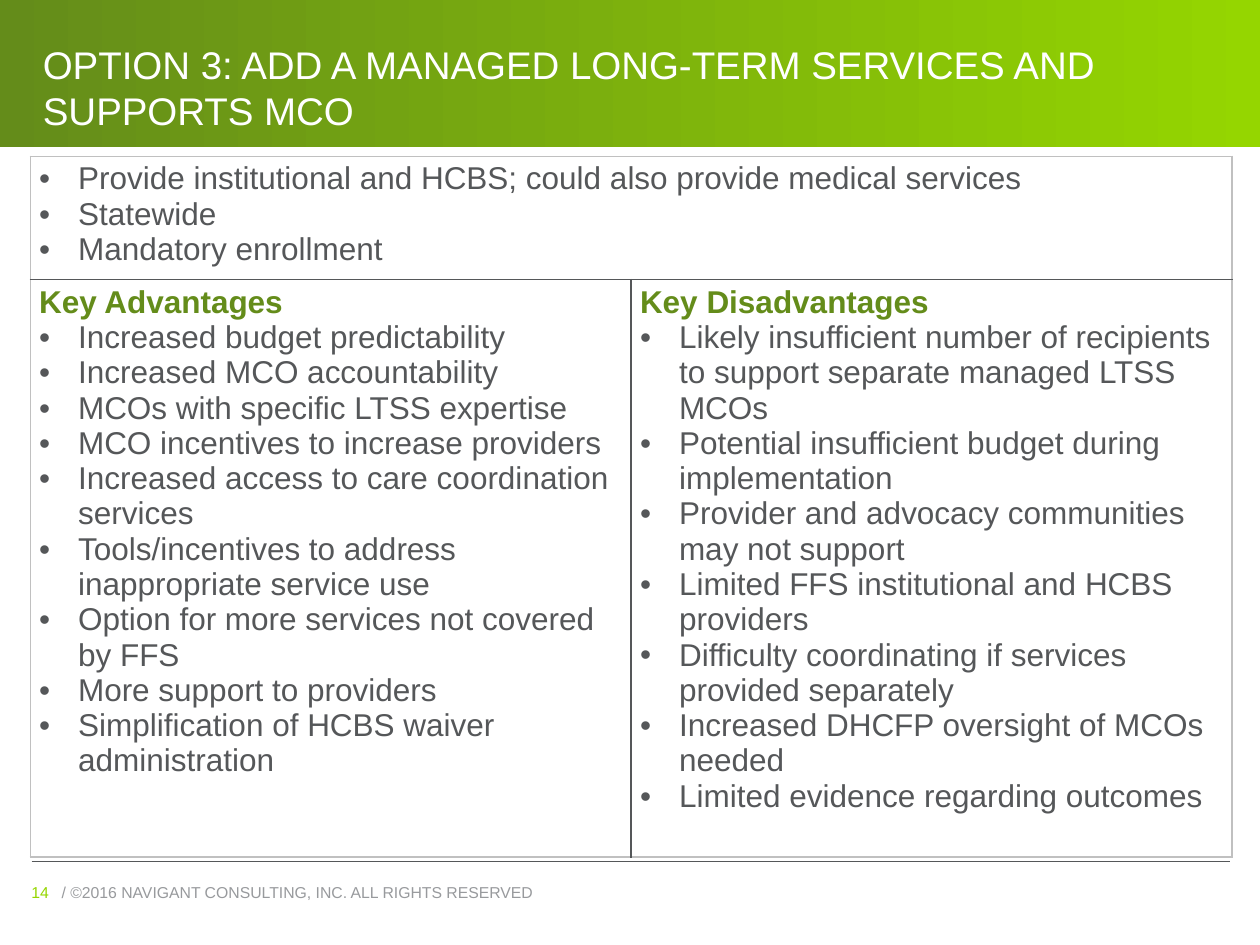
import pptx
import pptx.util
import pptx.dml.color
import pptx.enum.shapes
import pptx.enum.text
from lxml import etree
from pptx.util import Inches

COLORS = {
    "white": "FFFFFF",
    "dark_green": "648C1A",
    "lime": "95D600",
    "text": "555759",
    "footer": "989A9D",
    "frame": "C0C0C0",
}
NS = "{http://schemas.openxmlformats.org/drawingml/2006/main}"
rgb = pptx.dml.color.RGBColor.from_string


def write_text(frame, text, size=18, color="text", bold=False, bullet=False, new=False):
    paragraph = frame.add_paragraph() if new else frame.paragraphs[0]
    paragraph.alignment = pptx.enum.text.PP_ALIGN.LEFT
    if bullet:
        properties = paragraph._p.get_or_add_pPr()
        properties.set("marL", str(Inches(0.31)))
        properties.set("indent", str(-Inches(0.31)))
        etree.SubElement(properties, NS + "buFont", typeface="Arial")
        etree.SubElement(properties, NS + "buChar", char="•")
    run = paragraph.add_run()
    run.text = text
    run.font.name = "Arial"
    run.font.size = pptx.util.Pt(size)
    run.font.bold = bold
    run.font.color.rgb = rgb(COLORS[color])


def add_border(cell, side, color):
    line = etree.SubElement(cell._tc.get_or_add_tcPr(), NS + "ln" + side,
                            w=str(pptx.util.Pt(1)))
    fill = etree.SubElement(line, NS + "solidFill")
    etree.SubElement(fill, NS + "srgbClr", val=COLORS[color])


deck = pptx.Presentation()
deck.slide_width = Inches(10)
deck.slide_height = Inches(7.5)
slide = deck.slides.add_slide(deck.slide_layouts[5])
title = slide.shapes.title

# Green header band, placed behind the title
band = slide.shapes.add_shape(pptx.enum.shapes.MSO_SHAPE.RECTANGLE,
                              0, 0, Inches(10), Inches(1.17))
band.shadow.inherit = False
band.line.fill.background()
band.fill.gradient()
band.fill.gradient_angle = 0
for stop, color in zip(band.fill.gradient_stops, ("dark_green", "lime")):
    stop.color.rgb = rgb(COLORS[color])
title._element.addprevious(band._element)

# Title
title.left, title.top = Inches(0.24), Inches(0)
title.width, title.height = Inches(9.53), Inches(1.11)
title.text_frame.word_wrap = True
title.text_frame.auto_size = pptx.enum.text.MSO_AUTO_SIZE.NONE
title.text_frame.vertical_anchor = pptx.enum.text.MSO_ANCHOR.BOTTOM
write_text(title.text_frame, "OPTION 3: ADD A MANAGED LONG-TERM SERVICES AND SUPPORTS MCO",
           size=22, color="white")

# Footer rule, copyright line and page number
rule = slide.shapes.add_connector(pptx.enum.shapes.MSO_CONNECTOR.STRAIGHT,
                                  Inches(0.25), Inches(6.84), Inches(9.76), Inches(6.84))
rule.line.color.rgb = rgb(COLORS["text"])
rule.line.width = pptx.util.Pt(0.75)
etree.SubElement(rule._element.spPr, NS + "effectLst")

footer_parts = [
    ("/ ©2016 NAVIGANT CONSULTING, INC. ALL RIGHTS RESERVED", 0.39, 6.37, "footer"),
    ("14", 0.15, 0.68, "lime"),
]
for text, left, width, color in footer_parts:
    footer = slide.shapes.add_textbox(Inches(left), Inches(6.97), Inches(width), Inches(0.23))
    footer.text_frame.word_wrap = True
    footer.text_frame.vertical_anchor = pptx.enum.text.MSO_ANCHOR.MIDDLE
    write_text(footer.text_frame, text, size=9, color=color)

# Option table: (row, column, heading, bullets)
sections = [
    (0, 0, None, [
        "Provide institutional and HCBS; could also provide medical services",
        "Statewide",
        "Mandatory enrollment",
    ]),
    (1, 0, "Key Advantages", [
        "Increased budget predictability",
        "Increased MCO accountability",
        "MCOs with specific LTSS expertise",
        "MCO incentives to increase providers",
        "Increased access to care coordination services",
        "Tools/incentives to address inappropriate service use",
        "Option for more services not covered by FFS",
        "More support to providers",
        "Simplification of HCBS waiver administration",
    ]),
    (1, 1, "Key Disadvantages", [
        "Likely insufficient number of recipients to support separate managed LTSS MCOs",
        "Potential insufficient budget during implementation",
        "Provider and advocacy communities may not support",
        "Limited FFS institutional and HCBS providers",
        "Difficulty coordinating if services provided separately",
        "Increased DHCFP oversight of MCOs needed",
        "Limited evidence regarding outcomes",
    ]),
]
options = slide.shapes.add_table(2, 2, Inches(0.24), Inches(1.24),
                                 Inches(9.54), Inches(5.52)).table
options.first_row = options.horz_banding = False
options.rows[0].height, options.rows[1].height = Inches(0.95), Inches(4.57)
options.cell(0, 0).merge(options.cell(0, 1))

# Pale outer frame, dark inner lines
for row in range(2):
    for column in range(2):
        cell = options.cell(row, column)
        add_border(cell, "L", "text" if column == 1 else "frame")
        add_border(cell, "R", "text" if column == 0 and row == 1 else "frame")
        add_border(cell, "T", "text" if row == 1 else "frame")
        add_border(cell, "B", "text" if row == 0 else "frame")
        cell.fill.background()

for row, column, heading, points in sections:
    cell = options.cell(row, column)
    cell.margin_left = cell.margin_right = Inches(0.07)
    cell.margin_top = cell.margin_bottom = Inches(0.04)
    if heading:
        write_text(cell.text_frame, heading, color="dark_green", bold=True)
    for index, point in enumerate(points):
        write_text(cell.text_frame, point, bullet=True, new=bool(heading) or index > 0)

deck.save("out.pptx")
